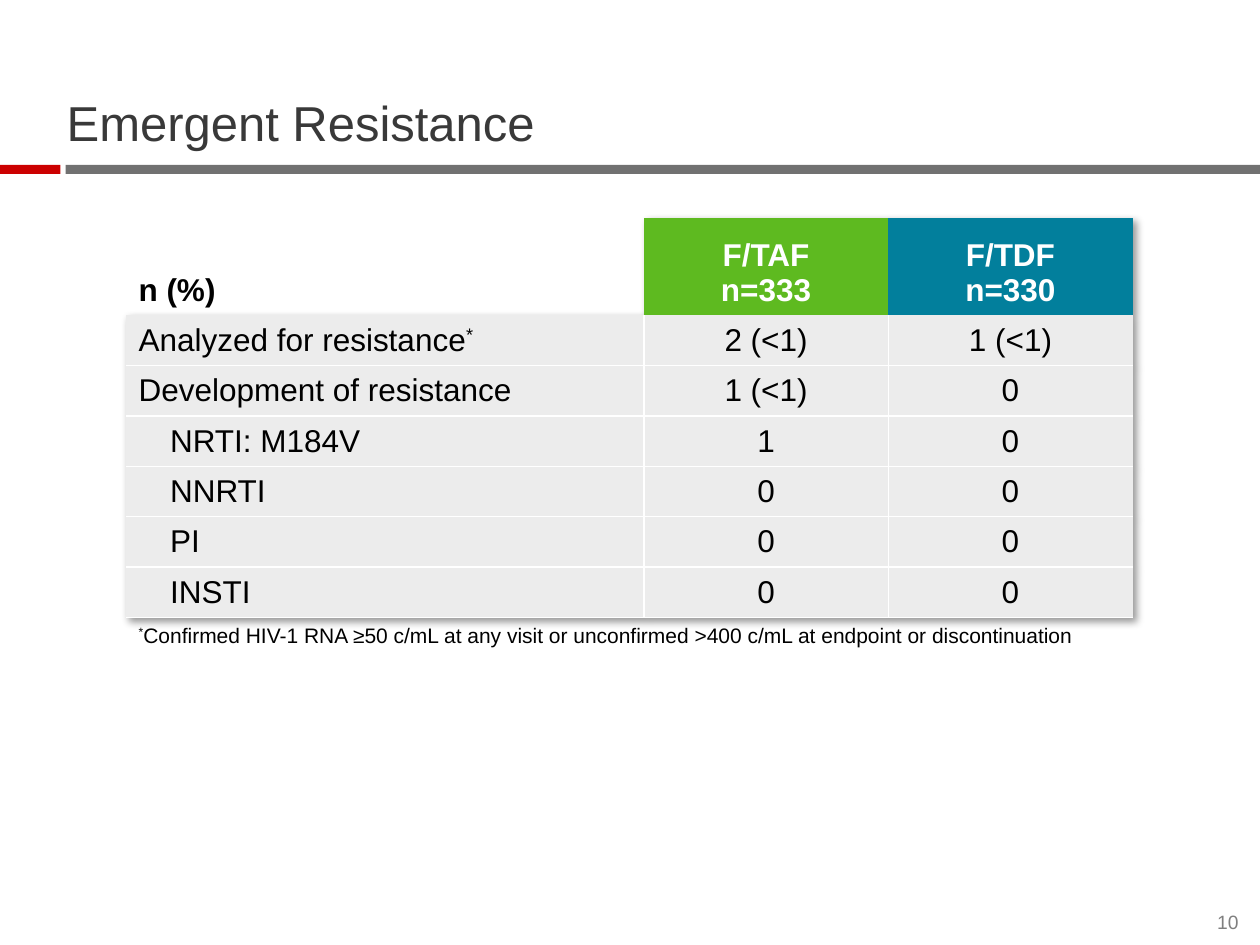
"""Build the Emergent Resistance slide with its results table."""
from lxml import etree
from pptx import Presentation
from pptx.dml.color import RGBColor
from pptx.enum import shapes, text
from pptx.oxml import ns, parse_xml
from pptx.util import Inches, Pt

TITLE = "Emergent Resistance"
PAGE = "10"
HEADER = [("n (%)", None, "000000"), ("F/TAF\nn=333", "5EBA20", "FFFFFF"), ("F/TDF\nn=330", "027F9C", "FFFFFF")]
ROWS = [
    (0, "Analyzed for resistance*", "2 (<1)", "1 (<1)"),
    (0, "Development of resistance", "1 (<1)", "0"),
    (1, "NRTI: M184V", "1", "0"),
    (1, "NNRTI", "0", "0"),
    (1, "PI", "0", "0"),
    (1, "INSTI", "0", "0"),
]
FOOTNOTE = "*Confirmed HIV-1 RNA ≥50 c/mL at any visit or unconfirmed >400 c/mL at endpoint or discontinuation"
BARS = [((0.52, 1.31, 9.48, 0.07), "717171"), ((0, 1.31, 0.48, 0.07), "CC0000")]
COLUMN_WIDTHS = [4.11, 1.94, 1.94]
ROW_HEIGHTS = [0.77] + [0.4] * (len(ROWS) + 1)
BODY_FILL = "ECECEC"
PLAIN_STYLE = "{2D5ABB26-0587-4C30-8999-92F81FD0307C}"
SHADOW = (
    f'<a:effectLst {ns.nsdecls("a")}><a:outerShdw blurRad="50800" dist="38100" dir="2700000" '
    'algn="tl" rotWithShape="0"><a:srgbClr val="000000"><a:alpha val="40000"/>'
    "</a:srgbClr></a:outerShdw></a:effectLst>"
)
LEFT, CENTER, RIGHT = text.PP_ALIGN.LEFT, text.PP_ALIGN.CENTER, text.PP_ALIGN.RIGHT
TOP, MIDDLE, BOTTOM = text.MSO_ANCHOR.TOP, text.MSO_ANCHOR.MIDDLE, text.MSO_ANCHOR.BOTTOM


def color(value):
    return RGBColor.from_string(value)


def set_values(target, values):
    for name, value in values.items():
        setattr(target, name, value)


def write(frame, content, size, ink="000000", align=LEFT, bold=False, line_spacing=None):
    for index, line in enumerate(content.split("\n")):
        paragraph = frame.add_paragraph() if index else frame.paragraphs[0]
        set_values(paragraph, {"alignment": align, "line_spacing": line_spacing})
        before, star, after = line.partition("*")
        for part in filter(None, (before, star, after)):
            run = paragraph.add_run()
            run.text = part
            set_values(run.font, {"name": "Arial", "size": Pt(size), "bold": bold})
            run.font.color.rgb = color(ink)
            if part == "*":
                run.font._element.set("baseline", "30000")


def add_text(slide, box, content, size, ink, **options):
    frame = slide.shapes.add_textbox(*map(Inches, box)).text_frame
    margins = dict.fromkeys(("margin_left", "margin_top", "margin_right", "margin_bottom"), 0)
    set_values(frame, {"word_wrap": True, "vertical_anchor": BOTTOM, **margins})
    write(frame, content, size, ink, **options)


def add_bar(slide, box, fill):
    bar = slide.shapes.add_shape(shapes.MSO_SHAPE.RECTANGLE, *map(Inches, box))
    bar.shadow.inherit = False
    bar.fill.solid()
    bar.fill.fore_color.rgb = color(fill)
    bar.line.fill.background()


def fill_cell(cell, content, size=18, fill=None, anchor=MIDDLE, borders="", **options):
    cell.vertical_anchor = anchor
    write(cell.text_frame, content, size, **options)
    if fill:
        cell.fill.solid()
        cell.fill.fore_color.rgb = color(fill)
    else:
        cell.fill.background()
    properties = cell._tc.get_or_add_tcPr()
    for index, side in enumerate(borders):
        border = etree.Element(ns.qn(f"a:ln{side}"), w=str(Pt(1)))
        solid = etree.SubElement(border, ns.qn("a:solidFill"))
        etree.SubElement(solid, ns.qn("a:srgbClr"), val="FFFFFF")
        properties.insert(index, border)


def add_results(slide):
    box = (1, 1.73, sum(COLUMN_WIDTHS), sum(ROW_HEIGHTS))
    frame = slide.shapes.add_table(len(ROW_HEIGHTS), len(COLUMN_WIDTHS), *map(Inches, box))
    table = frame.table
    set_values(table, {"first_row": False, "horz_banding": False})
    table._tbl.tblPr.find(ns.qn("a:tableStyleId")).text = PLAIN_STYLE
    table._tbl.tblPr.insert(0, parse_xml(SHADOW))
    for column, width in zip(table.columns, COLUMN_WIDTHS):
        column.width = Inches(width)
    for row, height in zip(table.rows, ROW_HEIGHTS):
        row.height = Inches(height)
    for column, (label, fill, ink) in enumerate(HEADER):
        align = CENTER if column else LEFT
        fill_cell(table.cell(0, column), label, fill=fill, anchor=BOTTOM, ink=ink, align=align, bold=True)
    for row, (level, *values) in enumerate(ROWS, 1):
        for column, value in enumerate(values):
            sides = ("L" if column else "") + ("R" if column < 2 else "") + ("T" if row > 1 else "") + "B"
            align = CENTER if column else LEFT
            fill_cell(table.cell(row, column), value, fill=BODY_FILL, borders=sides, align=align)
        if level:
            label = table.cell(row, 0).text_frame.paragraphs[0]
            label.level = level
            label._p.get_or_add_pPr().set("marL", str(Inches(0.25)))
            label._p.get_or_add_pPr().set("indent", "0")
    last = len(ROW_HEIGHTS) - 1
    table.cell(last, 0).merge(table.cell(last, 2))
    fill_cell(table.cell(last, 0), FOOTNOTE, size=12, anchor=TOP, borders="T")


def main():
    presentation = Presentation()
    set_values(presentation, {"slide_width": Inches(10), "slide_height": Inches(7.5)})
    slide = presentation.slides.add_slide(presentation.slide_layouts[6])
    for box, fill in BARS:
        add_bar(slide, box, fill)
    add_text(slide, (0.53, 0.47, 9, 0.74), TITLE, 28, "393939", line_spacing=0.9)
    add_results(slide)
    add_text(slide, (9.56, 7.23, 0.27, 0.18), PAGE, 11, "7F7F7F", align=RIGHT)
    presentation.save("out.pptx")


if __name__ == "__main__":
    main()
